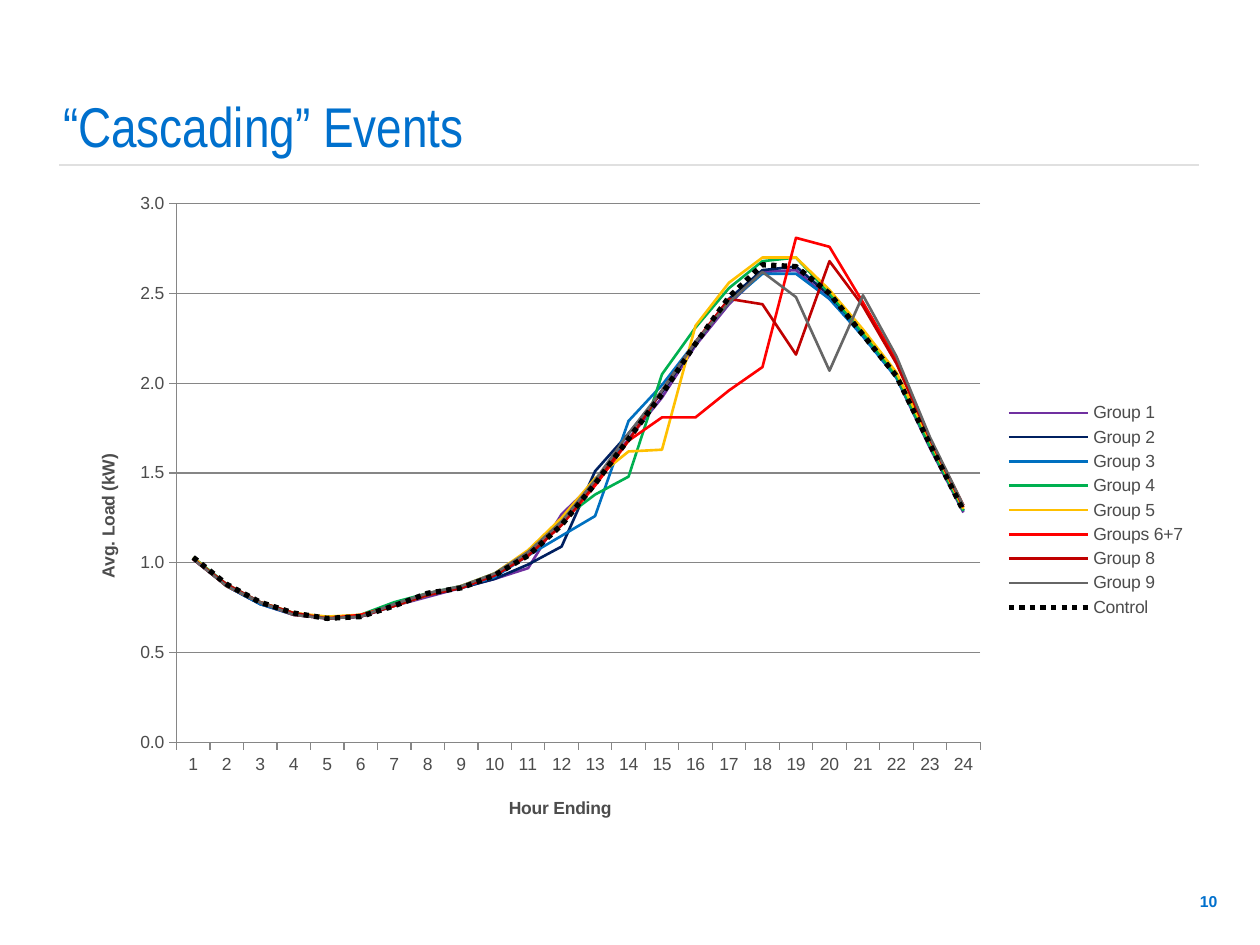
from lxml import etree
from pptx import Presentation
from pptx.chart.data import CategoryChartData
from pptx.dml.color import RGBColor
from pptx.enum.chart import XL_CHART_TYPE, XL_LEGEND_POSITION, XL_TICK_MARK
from pptx.enum.dml import MSO_LINE
from pptx.enum.shapes import MSO_CONNECTOR
from pptx.enum.text import MSO_ANCHOR, PP_ALIGN
from pptx.oxml.ns import qn
from pptx.util import Inches, Pt

# Content
TITLE = "“Cascading” Events"
PAGE = "10"
HOURS = [str(hour) for hour in range(1, 25)]
CATEGORY_TITLE, VALUE_TITLE = "Hour Ending", "Avg. Load (kW)"
GROUPS = [  # name, colour, hourly load
    ("Group 1", "7030A0", [1.03, 0.87, 0.77, 0.71, 0.69, 0.7, 0.76, 0.81, 0.86, 0.91, 0.97, 1.27,
                           1.45, 1.69, 1.92, 2.21, 2.44, 2.62, 2.63, 2.47, 2.27, 2.03, 1.64, 1.28]),
    ("Group 2", "002060", [1.02, 0.87, 0.77, 0.72, 0.69, 0.7, 0.77, 0.82, 0.86, 0.91, 0.99, 1.09,
                           1.51, 1.72, 1.95, 2.22, 2.47, 2.63, 2.65, 2.49, 2.27, 2.04, 1.65, 1.29]),
    ("Group 3", "0070C0", [1.02, 0.87, 0.77, 0.71, 0.69, 0.7, 0.76, 0.82, 0.86, 0.92, 1.04, 1.15,
                           1.26, 1.79, 1.99, 2.23, 2.45, 2.61, 2.61, 2.47, 2.26, 2.03, 1.65, 1.29]),
    ("Group 4", "00B050", [1.03, 0.88, 0.78, 0.72, 0.69, 0.71, 0.78, 0.83, 0.87, 0.94, 1.06, 1.24,
                           1.38, 1.48, 2.05, 2.31, 2.53, 2.68, 2.7, 2.5, 2.28, 2.04, 1.65, 1.29]),
    ("Group 5", "FFC000", [1.03, 0.87, 0.78, 0.72, 0.7, 0.71, 0.76, 0.82, 0.87, 0.94, 1.07, 1.25,
                           1.47, 1.62, 1.63, 2.32, 2.56, 2.7, 2.7, 2.52, 2.3, 2.06, 1.68, 1.3]),
    ("Groups 6+7", "FF0000", [1.02, 0.87, 0.78, 0.71, 0.69, 0.71, 0.76, 0.83, 0.86, 0.93, 1.04, 1.21,
                              1.43, 1.68, 1.81, 1.81, 1.96, 2.09, 2.81, 2.76, 2.45, 2.13, 1.69, 1.32]),
    ("Group 8", "C00000", [1.02, 0.88, 0.78, 0.72, 0.69, 0.7, 0.76, 0.82, 0.86, 0.93, 1.04, 1.21,
                           1.45, 1.68, 1.96, 2.23, 2.47, 2.44, 2.16, 2.68, 2.43, 2.11, 1.69, 1.31]),
    ("Group 9", "666666", [1.02, 0.87, 0.78, 0.71, 0.69, 0.7, 0.77, 0.83, 0.87, 0.94, 1.06, 1.23,
                           1.46, 1.72, 1.96, 2.23, 2.45, 2.62, 2.48, 2.07, 2.49, 2.15, 1.7, 1.32]),
    ("Control", "000000", [1.03, 0.88, 0.78, 0.72, 0.69, 0.7, 0.76, 0.83, 0.86, 0.93, 1.04, 1.21,
                           1.44, 1.69, 1.94, 2.22, 2.48, 2.66, 2.65, 2.5, 2.27, 2.04, 1.66, 1.29]),
]

# Formats
BLUE, TEXT, AXIS, RULE = "0070CD", "4C4C4C", "868686", "E0E0E0"
TITLE_FONT = {"name": "Arial Narrow", "size": Pt(32), "bold": False}
PAGE_FONT = {"name": "Arial", "size": Pt(9), "bold": True}
CHART_FONT = {"name": "Arial", "size": Pt(10)}
AXIS_TITLE_FONT = {**CHART_FONT, "bold": True}

# Places: inches on the slide, shares inside the chart
LEFT, WIDTH = 0.5, 9.01
TITLE_BOX = (LEFT, 0.57, WIDTH, 0.74)
CHART_BOX = (LEFT, 1.44, WIDTH, 5.22)
PAGE_BOX = (9.11, 6.95, 0.65, 0.4)
RULE_LINE = (0.47, 1.31, 9.52, 1.31)
PLOT_SHARE = {"x": 0.1, "y": 0.034, "w": 0.708, "h": 0.819}
LEGEND_SHARE = {"x": 0.83, "y": 0.33, "w": 0.16, "h": 0.34}
CATEGORY_TITLE_SHARE = {"x": 0.39, "y": 0.93}
VALUE_TITLE_SHARE = {"x": 0.027, "y": 0.41}


def rgb(value):
    return RGBColor.from_string(value)


def inches(values):
    return [Inches(value) for value in values]


def set_all(target, values):
    for key, value in values.items():
        setattr(target, key, value)


def style_font(font, values, color):
    set_all(font, values)
    font.color.rgb = rgb(color)


def style_line(line, color, width):
    line.color.rgb = rgb(color)
    line.width = Pt(width)


def place_part(parent, index, share, inner=False):
    """Give a chart part a manual layout in shares of the chart."""
    layout = parent.find(qn("c:layout"))
    if layout is None:
        layout = etree.Element(qn("c:layout"))
        parent.insert(index, layout)
    manual = etree.SubElement(layout, qn("c:manualLayout"))
    values = {"layoutTarget": "inner"} if inner else {}
    values.update({f"{key}Mode": "edge" for key in share if key in "xy"})
    values.update(share)
    for tag, value in values.items():
        etree.SubElement(manual, qn(f"c:{tag}")).set("val", str(value))


def style_axis(axis, title, share):
    axis.major_tick_mark = XL_TICK_MARK.OUTSIDE
    axis.minor_tick_mark = XL_TICK_MARK.NONE
    style_line(axis.format.line, AXIS, 0.75)
    style_font(axis.tick_labels.font, CHART_FONT, TEXT)
    axis_title = axis.axis_title
    axis_title.text_frame.text = title
    run = axis_title.text_frame.paragraphs[0].runs[0]
    style_font(run.font, AXIS_TITLE_FONT, TEXT)
    place_part(axis_title._element, 1, share)


def add_load_chart(slide):
    data = CategoryChartData(number_format="0.00")
    data.categories = HOURS
    for name, _, loads in GROUPS:
        data.add_series(name, loads)
    chart = slide.shapes.add_chart(XL_CHART_TYPE.LINE, *inches(CHART_BOX), data).chart
    chart.has_title = False
    style_font(chart.font, CHART_FONT, TEXT)

    # Lines
    plot = chart.plots[0]
    plot.vary_by_categories = False
    for series, (name, color, _) in zip(plot.series, GROUPS):
        series.smooth = False
        style_line(series.format.line, color, 3 if name == "Control" else 1.5)
        if name == "Control":
            series.format.line.dash_style = MSO_LINE.ROUND_DOT

    # Axes
    loads_axis = chart.value_axis
    style_axis(chart.category_axis, CATEGORY_TITLE, CATEGORY_TITLE_SHARE)
    style_axis(loads_axis, VALUE_TITLE, VALUE_TITLE_SHARE)
    set_all(loads_axis, {"minimum_scale": 0, "maximum_scale": 3, "major_unit": 0.5,
                         "has_major_gridlines": True})
    set_all(loads_axis.tick_labels, {"number_format": "0.0", "number_format_is_linked": False})
    style_line(loads_axis.major_gridlines.format.line, AXIS, 0.75)

    # Legend and plot area
    chart.has_legend = True
    set_all(chart.legend, {"position": XL_LEGEND_POSITION.RIGHT, "include_in_layout": False})
    style_font(chart.legend.font, CHART_FONT, TEXT)
    place_part(chart.legend._element, 1, LEGEND_SHARE)
    place_part(chart._chartSpace.chart.plotArea, 0, PLOT_SHARE, inner=True)


def main():
    deck = Presentation()
    set_all(deck, {"slide_width": Inches(10), "slide_height": Inches(7.5)})
    slide = deck.slides.add_slide(deck.slide_layouts[5])

    # Rule under the title
    rule = slide.shapes.add_connector(MSO_CONNECTOR.STRAIGHT, *inches(RULE_LINE))
    style_line(rule.line, RULE, 0.75)
    etree.SubElement(rule._element.spPr, qn("a:effectLst"))

    # Title and page number
    heading = slide.shapes.title
    set_all(heading, dict(zip(("left", "top", "width", "height"), inches(TITLE_BOX))))
    page = slide.shapes.add_textbox(*inches(PAGE_BOX))
    for shape, text, font, align, anchor in (
        (heading, TITLE, TITLE_FONT, PP_ALIGN.LEFT, MSO_ANCHOR.BOTTOM),
        (page, PAGE, PAGE_FONT, PP_ALIGN.RIGHT, MSO_ANCHOR.MIDDLE),
    ):
        frame = shape.text_frame
        set_all(frame, {"text": text, "word_wrap": True, "vertical_anchor": anchor})
        frame.paragraphs[0].alignment = align
        style_font(frame.paragraphs[0].runs[0].font, font, BLUE)
    heading.text_frame.margin_left = 0

    add_load_chart(slide)
    deck.save("out.pptx")


if __name__ == "__main__":
    main()
